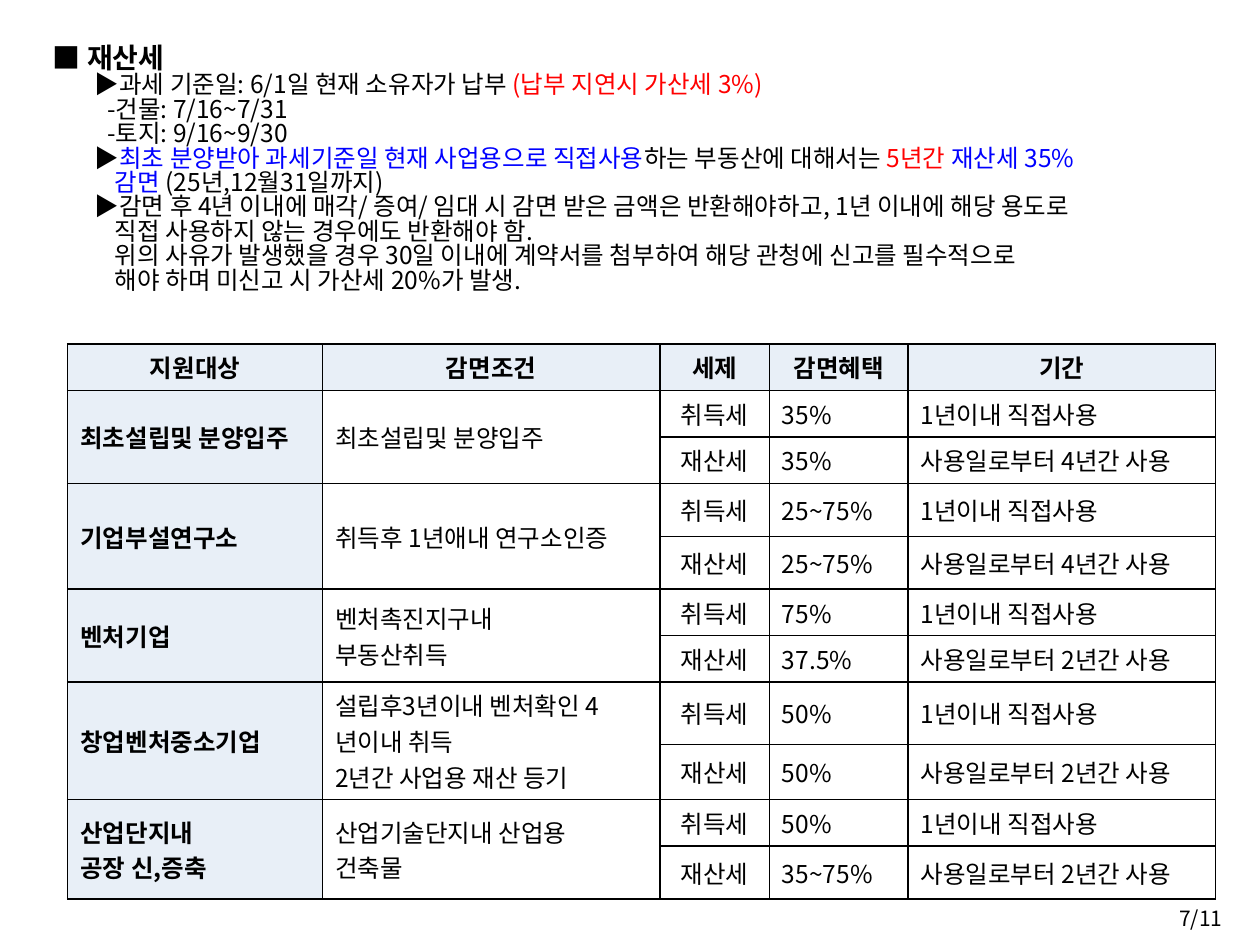
from lxml.etree import SubElement
from pptx import Presentation
from pptx.dml.color import RGBColor as Rgb
from pptx.enum.text import MSO_ANCHOR as Anchor, MSO_AUTO_SIZE as AutoSize, PP_ALIGN as Align
from pptx.oxml.ns import qn
from pptx.util import Pt

COLORS = {"black": "000000", "red": "FF0000", "blue": "0000FF", "head": "E8EFF7"}
FONT = "Noto Sans CJK KR"
BULLET, DASH, BODY = 24, 31, 35.5  # left indents of the title's lines

TITLE_LINES = [
    (BULLET, [("▶과세 기준일: 6/1일 현재 소유자가 납부 ", "black"),
              ("(납부 지연시 가산세 3%)", "red")]),
    (DASH, [("-건물: 7/16~7/31", "black")]),
    (DASH, [("-토지: 9/16~9/30", "black")]),
    (BULLET, [("▶", "black"),
              ("최초 분양받아 과세기준일 현재 사업용으로 직접사용", "blue"),
              ("하는 부동산에 대해서는 ", "black"),
              ("5년간 ", "red"), ("재산세 35%", "blue")]),
    (BODY, [("감면 ", "blue"), ("(25년,12월31일까지)", "black")]),
    (BULLET, [("▶감면 후 4년 이내에 매각/ 증여/ 임대 시 감면 받은 금액은 "
               "반환해야하고, 1년 이내에 해당 용도로", "black")]),
    (BODY, [("직접 사용하지 않는 경우에도 반환해야 함.", "black")]),
    (BODY, [("위의 사유가 발생했을 경우 30일 이내에 계약서를 첨부하여 "
             "해당 관청에 신고를 필수적으로", "black")]),
    (BODY, [("해야 하며 미신고 시 가산세 20%가 발생.", "black")]),
]

HEADERS = ["지원대상", "감면조건", "세제", "감면혜택", "기간"]
# target, condition, acquisition tax cut, property tax cut, years of use
GROUPS = [
    ("최초설립및 분양입주", "최초설립및 분양입주", "35%", "35%", 4),
    ("기업부설연구소", "취득후 1년애내 연구소인증", "25~75%", "25~75%", 4),
    ("벤처기업", "벤처촉진지구내\n부동산취득", "75%", "37.5%", 2),
    ("창업벤처중소기업", "설립후3년이내 벤처확인 4년이내 취득\n2년간 사업용 재산 등기",
     "50%", "50%", 2),
    ("산업단지내\n공장 신,증축", "산업기술단지내 산업용\n건축물", "50%", "35~75%", 2),
]
COLUMN_WIDTHS = [145.6, 192.8, 62.6, 79.2, 175.8]
ROW_HEIGHTS = [26.6, 26.6, 26.6, 30.2, 30.2, 26.6, 26.6, 35.5, 31.6, 26.6, 30.2]


class SlideBuilder:
    def __init__(self, deck):
        self.page = deck.slides.add_slide(deck.slide_layouts[5])

    def span(self, para, text, color="black", size=14, bold=False):
        span = para.add_run()
        span.text = text
        formats = {"name": FONT, "size": Pt(size), "bold": bold}
        for name, value in formats.items():
            setattr(span.font, name, value)
        span.font.color.rgb = Rgb.from_string(COLORS[color])
        SubElement(span.font._element, qn("a:ea")).set("typeface", FONT)

    def place(self, box, left, top, width, height):
        sides = {"left": left, "top": top, "width": width, "height": height}
        for name, value in sides.items():
            setattr(box, name, Pt(value))

    def title(self, heading, lines, *position):
        box = self.page.shapes.title
        self.place(box, *position)
        frame = box.text_frame
        formats = {"auto_size": AutoSize.NONE, "word_wrap": True,
                   "vertical_anchor": Anchor.MIDDLE}
        for name, value in formats.items():
            setattr(frame, name, value)
        self.span(frame.paragraphs[0], heading, size=16, bold=True)
        for indent, spans in lines:
            para = frame.add_paragraph()
            para._p.get_or_add_pPr().set("marL", str(Pt(indent)))
            for text, color in spans:
                self.span(para, text, color)
        for para in frame.paragraphs:
            para.alignment = Align.LEFT
            para.line_spacing = 0.83
            para.space_before = Pt(0)

    def label(self, text, *position):
        box = self.page.shapes.add_textbox(*map(Pt, position))
        box.text_frame.word_wrap = False
        para = box.text_frame.paragraphs[0]
        para.alignment = Align.RIGHT
        self.span(para, text, size=12)

    def table(self, left, top, widths, heights):
        frame = self.page.shapes.add_table(
            len(heights), len(widths), Pt(left), Pt(top), Pt(sum(widths)), Pt(sum(heights)))
        table = frame.table
        table.first_row = table.horz_banding = False
        for column, width in zip(table.columns, widths):
            column.width = Pt(width)
        for row, height in zip(table.rows, heights):
            row.height = Pt(height)
        for cell in table.iter_cells():
            self.borders(cell)
            cell.fill.background()
            cell.margin_top = cell.margin_bottom = Pt(3)
            cell.vertical_anchor = Anchor.MIDDLE
        return table

    def borders(self, cell):
        properties = cell._tc.get_or_add_tcPr()
        for side in ("lnL", "lnR", "lnT", "lnB"):
            line = SubElement(properties, qn(f"a:{side}"), w=str(Pt(1)))
            fill = SubElement(line, qn("a:solidFill"))
            SubElement(fill, qn("a:srgbClr"), val=COLORS["black"])

    def cell(self, cell, text, align=Align.LEFT, header=False):
        if header:
            cell.fill.solid()
            cell.fill.fore_color.rgb = Rgb.from_string(COLORS["head"])
        frame = cell.text_frame
        for index, line in enumerate(text.split("\n")):
            para = frame.add_paragraph() if index else frame.paragraphs[0]
            para.alignment = align
            self.span(para, line, bold=header)


def main():
    deck = Presentation()
    deck.slide_width, deck.slide_height = Pt(720), Pt(540)
    builder = SlideBuilder(deck)
    builder.title("■ 재산세", TITLE_LINES, 23, 9.4, 674.6, 175.7)
    builder.label("7/11", 666, 514, 39.6, 21)

    table = builder.table(38.7, 196.5, COLUMN_WIDTHS, ROW_HEIGHTS)
    for column, text in enumerate(HEADERS):
        builder.cell(table.cell(0, column), text, Align.CENTER, header=True)
    for index, (target, condition, acquisition, holding, years) in enumerate(GROUPS):
        top = 1 + 2 * index
        for column, text in enumerate((target, condition)):
            cell = table.cell(top, column)
            cell.merge(table.cell(top + 1, column))
            builder.cell(cell, text, header=column == 0)
        taxes = [("취득세", acquisition, "1년이내 직접사용"),
                 ("재산세", holding, f"사용일로부터 {years}년간 사용")]
        for row, (tax, cut, period) in enumerate(taxes, top):
            builder.cell(table.cell(row, 2), tax, Align.CENTER)
            builder.cell(table.cell(row, 3), cut)
            builder.cell(table.cell(row, 4), period)
    deck.save("out.pptx")


if __name__ == "__main__":
    main()
